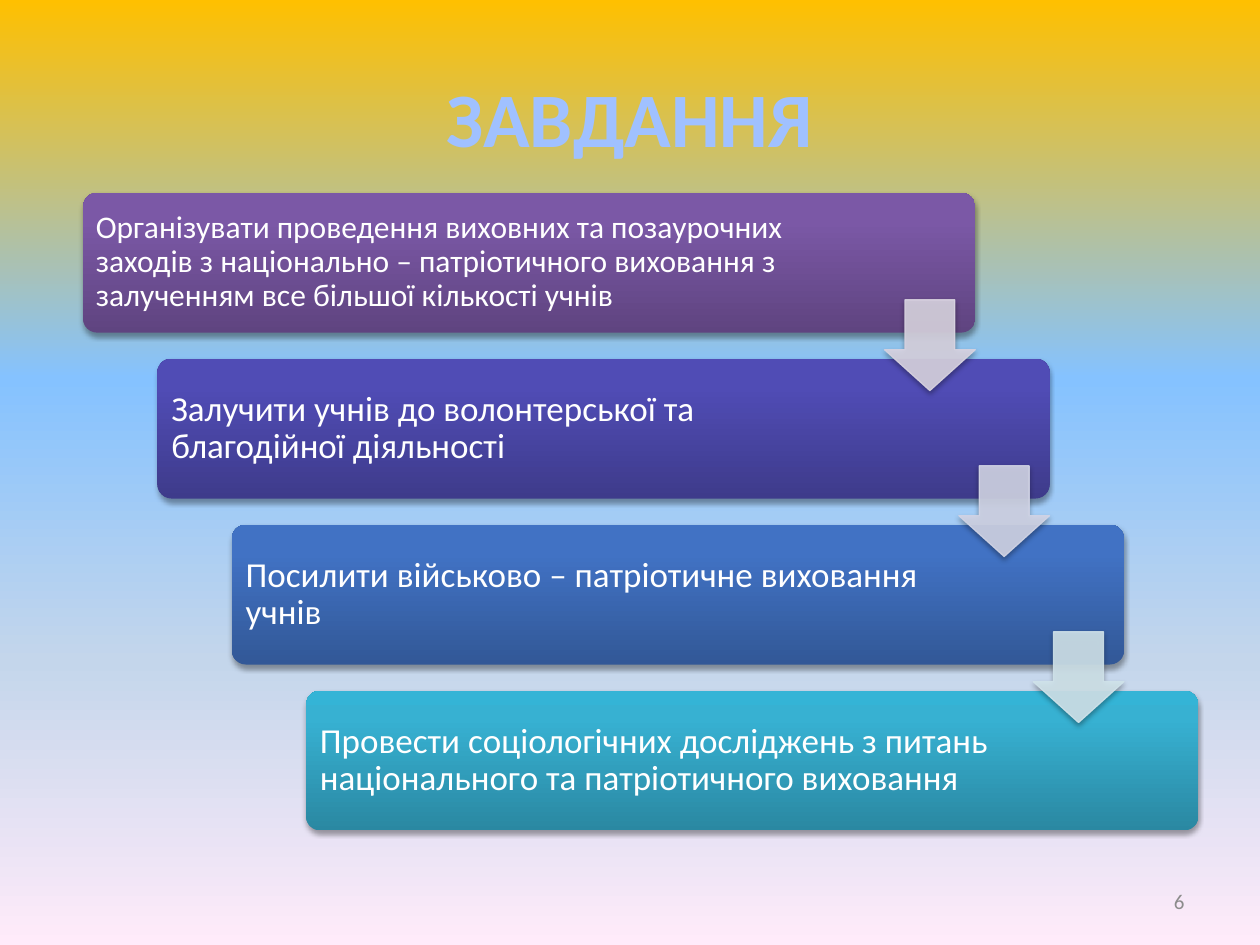
import pptx
import pptx.dml.color
import pptx.enum.shapes
import pptx.enum.text
import pptx.oxml
import pptx.oxml.ns
import pptx.util
from pptx.util import Inches

FONT = "Calibri"
SHADOW = (
    f'<a:outerShdw {pptx.oxml.ns.nsdecls("a")} blurRad="39370" dist="22860" '
    'dir="5400000" rotWithShape="0">'
    '<a:srgbClr val="000000"><a:alpha val="35000"/></a:srgbClr></a:outerShdw>'
)


def color(hex_value):
    return pptx.dml.color.RGBColor.from_string(hex_value)


def set_gradient(fill, element, stops, angle):
    """Fill with (percent, colour) stops; angle is counter-clockwise."""
    fill.gradient()
    fill.gradient_angle = angle
    stop_list = element.xpath(".//a:gsLst")[0]
    for stop in list(stop_list):
        stop_list.remove(stop)
    for percent, hex_value in stops:
        stop_list.append(pptx.oxml.parse_xml(
            f'<a:gs {pptx.oxml.ns.nsdecls("a")} pos="{percent * 1000}">'
            f'<a:srgbClr val="{hex_value}"/></a:gs>'))


presentation = pptx.Presentation()
presentation.slide_width = Inches(10)
presentation.slide_height = Inches(7.5)
slide = presentation.slides.add_slide(presentation.slide_layouts[5])
set_gradient(slide.background.fill, slide.element,
             [(0, "FFC000"), (40, "85C2FF"), (70, "C4D6EB"), (100, "FFEBFA")], 270)

title = slide.shapes.title
title.left, title.top = Inches(0.5), Inches(0.3)
title.width, title.height = Inches(9), Inches(1.25)
texts = [(title, "ЗАВДАННЯ", "CENTER", 0.1, 1,
          {"size": pptx.util.Pt(44), "bold": True}, "A0C1FF")]

# Staircase of cards: text, text size, text width, inset, gradient from bottom to top
cards = [
    ("Організувати проведення виховних та позаурочних заходів з національно – "
     "патріотичного виховання з залученням все більшої кількості учнів",
     18, 5.79, 0.07, ("5F4480", "7B58A6", "7C57A8")),
    ("Залучити учнів до волонтерської та благодійної діяльності",
     20, 5.7, 0.08, ("3E3B8B", "504CB5", "4F4BB8")),
    ("Посилити військово – патріотичне виховання учнів",
     20, 5.7, 0.08, ("325897", "4172C4", "3F72C7")),
    ("Провести соціологічних досліджень з питань національного та "
     "патріотичного виховання",
     20, 5.7, 0.08, ("2A88A2", "37B1D2", "34B4D6")),
]
first_left, first_top = 0.66, 1.53
step_x, step_y = 0.59, 1.317
card_width, card_height = 7.08, 1.11
padding = 0.03

for index, (text, size, text_width, inset, colors) in enumerate(cards):
    left, top = first_left + index * step_x, first_top + index * step_y
    card = slide.shapes.add_shape(
        pptx.enum.shapes.MSO_SHAPE.ROUNDED_RECTANGLE,
        Inches(left), Inches(top), Inches(card_width), Inches(card_height))
    card.adjustments[0] = 0.1
    set_gradient(card.fill, card.element, zip((0, 80, 100), colors), 90)
    card.line.fill.background()
    card.shadow.inherit = False
    card.element.xpath(".//a:effectLst")[0].append(pptx.oxml.parse_xml(SHADOW))
    text_box = slide.shapes.add_textbox(
        Inches(left + padding), Inches(top + padding),
        Inches(text_width), Inches(card_height - 2 * padding))
    texts.append((text_box, text, "LEFT", inset, 0.9,
                  {"size": pptx.util.Pt(size)}, "FFFFFF"))

arrow_size = 0.72
for index, arrow_color in enumerate(("D8D3E0", "D1D4E5", "D0E3EA")):
    arrow = slide.shapes.add_shape(
        pptx.enum.shapes.MSO_SHAPE.DOWN_ARROW,
        Inches(first_left + card_width - arrow_size + index * step_x),
        Inches(2.38 + index * step_y), Inches(arrow_size), Inches(arrow_size))
    arrow.adjustments[0] = 0.45
    arrow.adjustments[1] = 0.55
    arrow.adjustments[0], arrow.adjustments[1] = 0.55, 0.45
    arrow.fill.solid()
    arrow.fill.fore_color.rgb = color(arrow_color)
    arrow.line.color.rgb = color(arrow_color)
    arrow.line.width = pptx.util.Pt(0.75)
    for color_element in arrow.element.xpath("./p:spPr//a:srgbClr"):
        color_element.append(pptx.oxml.parse_xml(
            f'<a:alpha {pptx.oxml.ns.nsdecls("a")} val="90000"/>'))
    arrow.shadow.inherit = False
    arrow.element.xpath(".//a:effectLst")[0].append(pptx.oxml.parse_xml(SHADOW))

slide_number = slide.shapes.add_textbox(
    Inches(7.17), Inches(6.95), Inches(2.33), Inches(0.4))
texts.append((slide_number, "6", "RIGHT", 0.1, 1,
              {"size": pptx.util.Pt(12)}, "8C8C8C"))

for shape, text, alignment, inset, spacing, font_format, text_color in texts:
    frame = shape.text_frame
    frame.text = text
    frame.word_wrap = True
    frame.vertical_anchor = pptx.enum.text.MSO_ANCHOR.MIDDLE
    for side in ("left", "right", "top", "bottom"):
        setattr(frame, f"margin_{side}", Inches(inset))
    paragraph = frame.paragraphs[0]
    paragraph.alignment = pptx.enum.text.PP_ALIGN[alignment]
    paragraph.line_spacing = spacing
    font = paragraph.runs[0].font
    for name, value in {"name": FONT, **font_format}.items():
        setattr(font, name, value)
    font.color.rgb = color(text_color)

presentation.save("out.pptx")
